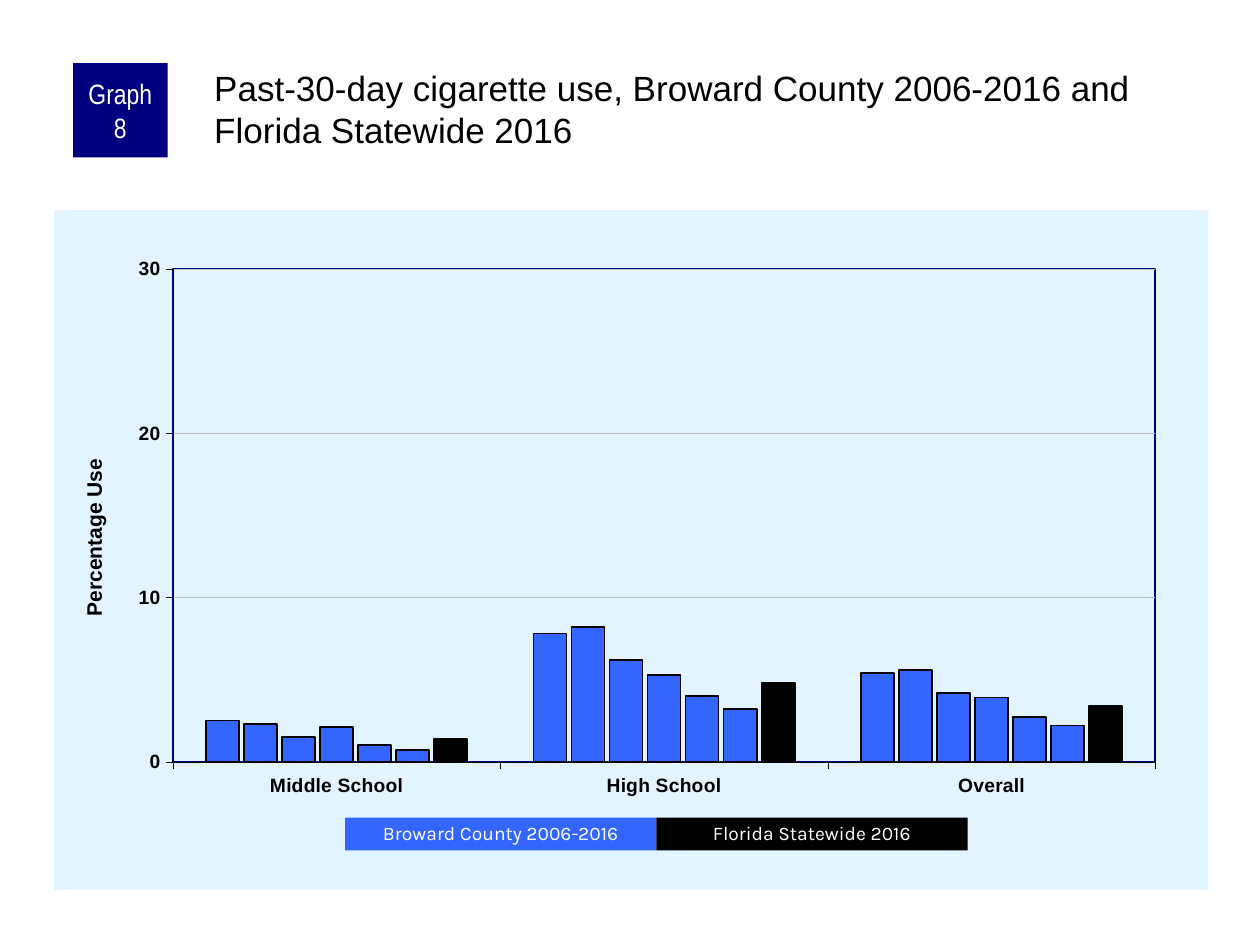
"""Build the slide on past-30-day cigarette use in Broward County and Florida."""
import pptx
import pptx.chart.data
import pptx.dml.color
import pptx.enum.chart
import pptx.enum.shapes
import pptx.enum.text
import pptx.oxml
import pptx.oxml.ns
import pptx.util

Inches = pptx.util.Inches
Pt = pptx.util.Pt
RGBColor = pptx.dml.color.RGBColor
qn = pptx.oxml.ns.qn
ALIGN = pptx.enum.text.PP_ALIGN
ANCHOR = pptx.enum.text.MSO_ANCHOR

NAVY = RGBColor(0x00, 0x00, 0x80)
BLUE = RGBColor(0x33, 0x66, 0xFF)
PALE_BLUE = RGBColor(0xE1, 0xF4, 0xFF)
GRAY = RGBColor(0xC0, 0xC0, 0xC0)
BLACK = RGBColor(0x00, 0x00, 0x00)
WHITE = RGBColor(0xFF, 0xFF, 0xFF)

HEADING = "Past-30-day cigarette use, Broward County 2006-2016 and Florida Statewide 2016"
BADGE = "Graph 8"
VALUE_TITLE = "Percentage Use"
SCHOOLS = ["Middle School", "High School", "Overall"]
USE = [
    (2.5, 7.8, 5.4),
    (2.3, 8.2, 5.6),
    (1.5, 6.2, 4.2),
    (2.1, 5.3, 3.9),
    (1, 4, 2.7),
    (0.7, 3.2, 2.2),
    (1.4, 4.8, 3.4),
]
LEGEND = [("Broward County 2006-2016", BLUE), ("Florida Statewide 2016", BLACK)]
LEGEND_LEFT, LEGEND_TOP, LEGEND_WIDTH, LEGEND_HEIGHT = 2.74, 6.49, 2.47, 0.26
CHART_NS = pptx.oxml.ns.nsdecls("c", "a")


def set_font(font, size, color=BLACK, name="Arial", bold=False):
    font.size, font.name, font.bold = Pt(size), name, bold
    font.color.rgb = color


def write(frame, text, size, color=BLACK, name="Arial", align=ALIGN.CENTER,
          anchor=ANCHOR.MIDDLE, insets=(0.1, 0.05, 0.1, 0.05), spacing=None):
    frame.word_wrap = True
    frame.auto_size = pptx.enum.text.MSO_AUTO_SIZE.NONE
    frame.vertical_anchor = anchor
    (frame.margin_left, frame.margin_top,
     frame.margin_right, frame.margin_bottom) = map(Inches, insets)
    frame.text = text
    paragraph = frame.paragraphs[0]
    paragraph.alignment = align
    paragraph.line_spacing = spacing
    paragraph.space_before = Pt(0)
    set_font(paragraph.runs[0].font, size, color, name)


def add_box(slide, box, fill, text, **text_format):
    shape = slide.shapes.add_shape(
        pptx.enum.shapes.MSO_SHAPE.RECTANGLE, *map(Inches, box))
    shape.shadow.inherit = False
    shape.fill.solid()
    shape.fill.fore_color.rgb = fill
    shape.line.fill.background()
    write(shape.text_frame, text, color=WHITE, **text_format)


def set_line(line, color, width):
    line.color.rgb = color
    line.width = Pt(width)


def place(element, index, target="", **position):
    old = element.find(qn("c:layout"))
    if old is not None:
        element.remove(old)
    modes = "".join(f'<c:{key}Mode val="edge"/>' for key in "xy")
    values = "".join(f'<c:{key} val="{value}"/>' for key, value in position.items())
    element.insert(index, pptx.oxml.parse_xml(
        f"<c:layout {CHART_NS}><c:manualLayout>{target}{modes}{values}"
        "</c:manualLayout></c:layout>"))


def area_format(content):
    return pptx.oxml.parse_xml(f"<c:spPr {CHART_NS}>{content}</c:spPr>")


def solid(color):
    return f'<a:solidFill><a:srgbClr val="{color}"/></a:solidFill>'


def add_use_chart(slide):
    data = pptx.chart.data.CategoryChartData()
    data.categories = SCHOOLS
    for number, values in enumerate(USE, 1):
        data.add_series(f"Series {number}", values)
    chart = slide.shapes.add_chart(
        pptx.enum.chart.XL_CHART_TYPE.COLUMN_CLUSTERED,
        *map(Inches, (0.43, 1.67, 9.16, 5.39)), data).chart
    chart.has_legend = chart.has_title = False
    set_font(chart.font, 8)

    bars = chart.plots[0]
    bars.vary_by_categories = False
    bars.gap_width, bars.overlap = 200, -15
    for number, series in enumerate(bars.series, 1):
        series.invert_if_negative = False
        series.format.fill.solid()
        series.format.fill.fore_color.rgb = BLACK if number == len(USE) else BLUE
        set_line(series.format.line, BLACK, 1)

    for axis in (chart.category_axis, chart.value_axis):
        axis.major_tick_mark = pptx.enum.chart.XL_TICK_MARK.OUTSIDE
        set_font(axis.tick_labels.font, 11, bold=True)
        set_line(axis.format.line, BLACK, 0.25)

    percent = chart.value_axis
    percent.minimum_scale, percent.maximum_scale, percent.major_unit = 0, 30, 10
    percent.has_major_gridlines = True
    set_line(percent.major_gridlines.format.line, GRAY, 0.25)
    title_frame = percent.axis_title.text_frame
    title_frame.text = VALUE_TITLE
    set_font(title_frame.paragraphs[0].runs[0].font, 12, bold=True)
    title = percent.axis_title._element
    place(title, 1, x=0.02, y=0.36)

    chart_space = chart._chartSpace
    plot_area = chart_space.chart.plotArea
    place(plot_area, 0, '<c:layoutTarget val="inner"/>',
          x=0.103, y=0.086, w=0.851, h=0.726)
    plot_area.append(area_format(
        f'<a:noFill/><a:ln w="{Pt(1)}">{solid(NAVY)}</a:ln>'))
    chart_space.chart.addnext(area_format(
        f"{solid(PALE_BLUE)}<a:ln><a:noFill/></a:ln>"))


def main():
    deck = pptx.Presentation()
    deck.slide_width, deck.slide_height = Inches(10), Inches(7.5)
    slide = deck.slides.add_slide(deck.slide_layouts[5])

    heading = slide.shapes.title
    heading.left, heading.top = Inches(1.67), Inches(0.5)
    heading.width, heading.height = Inches(7.92), Inches(0.83)
    write(heading.text_frame, HEADING, size=20, align=ALIGN.LEFT,
          anchor=ANCHOR.TOP, insets=(0.03, 0.03, 0, 0))

    add_use_chart(slide)
    add_box(slide, (0.58, 0.5, 0.75, 0.75), NAVY, BADGE, size=16,
            name="Arial Narrow", insets=(0.05, 0, 0.05, 0))
    for place_in_row, (label, color) in enumerate(LEGEND):
        left = LEGEND_LEFT + place_in_row * LEGEND_WIDTH
        add_box(slide, (left, LEGEND_TOP, LEGEND_WIDTH, LEGEND_HEIGHT), color,
                label, size=11, name="Karla", spacing=0.9)
    deck.save("out.pptx")


if __name__ == "__main__":
    main()
